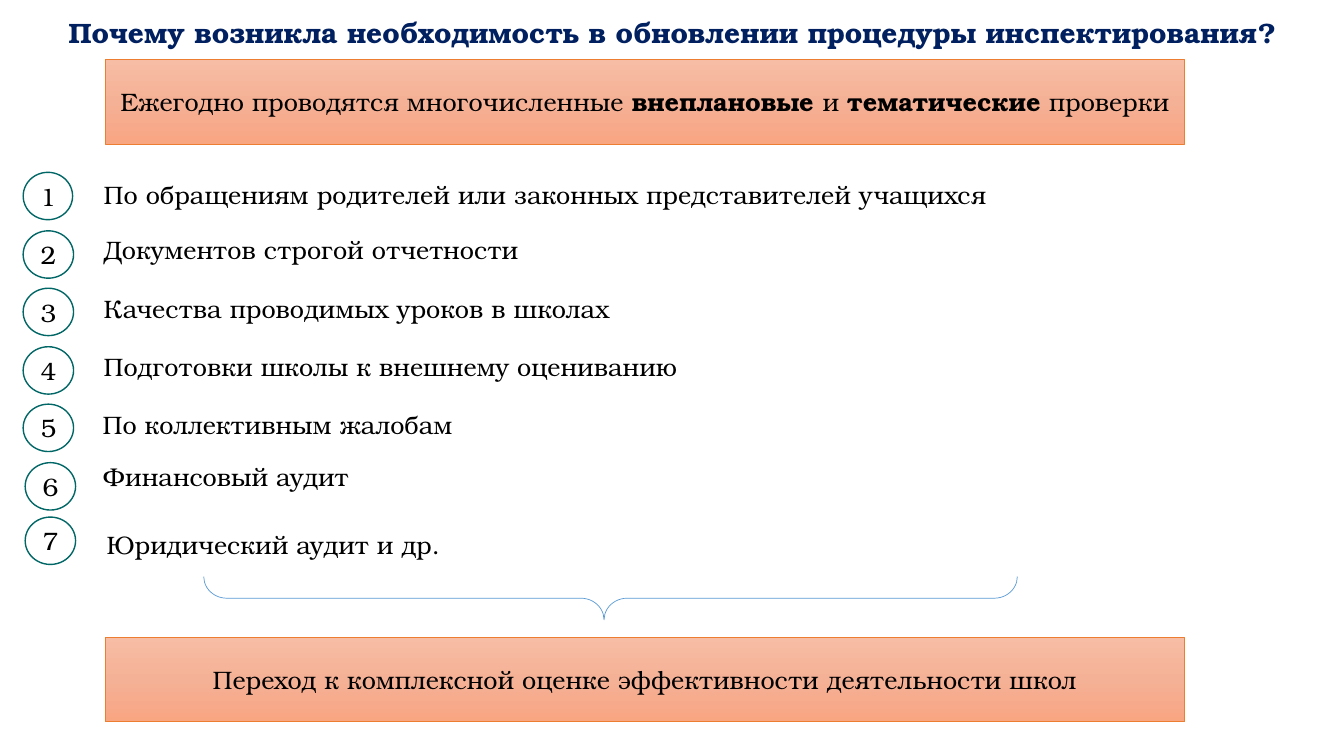
from copy import deepcopy

from pptx import Presentation
from pptx.dml.color import RGBColor
from pptx.enum.shapes import MSO_SHAPE
from pptx.enum.text import MSO_ANCHOR, MSO_AUTO_SIZE, PP_ALIGN
from pptx.oxml.ns import qn
from pptx.util import Inches, Pt

FONT = "TeX Gyre Bonum"
BANNER_COLORS = ("F7BDA5", "F5B196", "F8A582")

# Reason, text left, top and width, circle left, top and width
REASONS = [
    ("По обращениям родителей или законных представителей учащихся", 0.93, 1.73, 9.65, 0.23, 1.71, 0.49),
    ("Документов строгой отчетности", 0.93, 2.28, 6.51, 0.23, 2.29, 0.5),
    ("Качества проводимых уроков в школах", 0.93, 2.86, 5.27, 0.23, 2.86, 0.5),
    ("Подготовки школы к внешнему оцениванию", 0.93, 3.44, 5.97, 0.23, 3.44, 0.5),
    ("По коллективным жалобам", 0.92, 4.01, 3.67, 0.23, 4.01, 0.5),
    ("Финансовый аудит", 0.92, 4.53, 2.66, 0.25, 4.59, 0.5),
    ("Юридический аудит и др.", 0.96, 5.2, 3.57, 0.25, 5.13, 0.5),
]


def color(value):
    return RGBColor.from_string(value)


def write(box, *spans, size=18, ink="000000", align=PP_ALIGN.CENTER,
          anchor=MSO_ANCHOR.MIDDLE, wrap=True, fit=MSO_AUTO_SIZE.NONE):
    """Fill a shape with one paragraph of (text, bold) spans."""
    frame = box.text_frame
    frame.auto_size = fit
    frame.word_wrap = wrap
    frame.vertical_anchor = anchor
    para = frame.paragraphs[0]
    para.alignment = align
    for text, bold in spans:
        span = para.add_run()
        span.text = text
        span.font.name = FONT
        span.font.size = Pt(size)
        span.font.bold = bold
        span.font.color.rgb = color(ink)


def add_outlined(page, kind, place, line, weight):
    shape = page.shapes.add_shape(kind, *map(Inches, place))
    shape.shadow.inherit = False
    shape.line.color.rgb = color(line)
    shape.line.width = Pt(weight)
    return shape


def add_title(page, text):
    title = page.shapes.title
    title.left, title.top, title.width, title.height = map(Inches, (0, 0.1, 13.33, 0.44))
    write(title, (text, True), size=20, ink="002060", anchor=MSO_ANCHOR.TOP)


def add_banner(page, top, *spans):
    banner = add_outlined(page, MSO_SHAPE.RECTANGLE, (1.04, top, 10.71, 0.84), "ED7D31", 0.5)
    banner.fill.gradient()
    banner.fill.gradient_angle = 270
    # The default gradient has two stops; add one between them
    stops = next(banner.element.iter(qn("a:gsLst")))
    stops.insert(1, deepcopy(stops[0]))
    for index, stop in enumerate(banner.fill.gradient_stops):
        stop.position = index / 2
        stop.color.rgb = color(BANNER_COLORS[index])
    write(banner, *spans)


def add_circle(page, number, left, top, width):
    circle = add_outlined(page, MSO_SHAPE.OVAL, (left, top, width, 0.47), "006666", 1)
    circle.fill.solid()
    circle.fill.fore_color.rgb = color("FFFFFF")
    write(circle, (str(number), False))


def add_reason(page, text, left, top, width, wrap):
    box = page.shapes.add_textbox(*map(Inches, (left, top, width, 0.4)))
    write(box, (text, False), align=PP_ALIGN.LEFT, anchor=MSO_ANCHOR.TOP,
          wrap=wrap, fit=MSO_AUTO_SIZE.SHAPE_TO_FIT_TEXT)


def add_brace(page):
    brace = add_outlined(page, MSO_SHAPE.RIGHT_BRACE, (5.84, 1.9, 0.43, 8.07), "5B9BD5", 0.5)
    brace.rotation = 90
    brace.fill.background()
    brace.adjustments[0] = 0.533
    brace.adjustments[1] = 0.508


def main():
    deck = Presentation()
    deck.slide_width, deck.slide_height = Inches(13.33), Inches(7.5)
    page = deck.slides.add_slide(deck.slide_layouts[5])

    # Heading
    add_title(page, "Почему возникла необходимость в обновлении процедуры инспектирования?")

    # Numbered reasons; the first two sit in wide wrapping boxes
    for number, (text, left, top, width, *circle) in enumerate(REASONS, 1):
        add_reason(page, text, left, top, width, wrap=number <= 2)
        add_circle(page, number, *circle)

    # Brace leading to the conclusion, and both banners
    add_brace(page)
    add_banner(page, 6.32, ("Переход к комплексной оценке эффективности деятельности школ", False))
    add_banner(page, 0.59, ("Ежегодно проводятся многочисленные ", False), ("внеплановые ", True),
               ("и ", False), ("тематические", True), (" проверки", False))

    deck.save("out.pptx")


if __name__ == "__main__":
    main()
